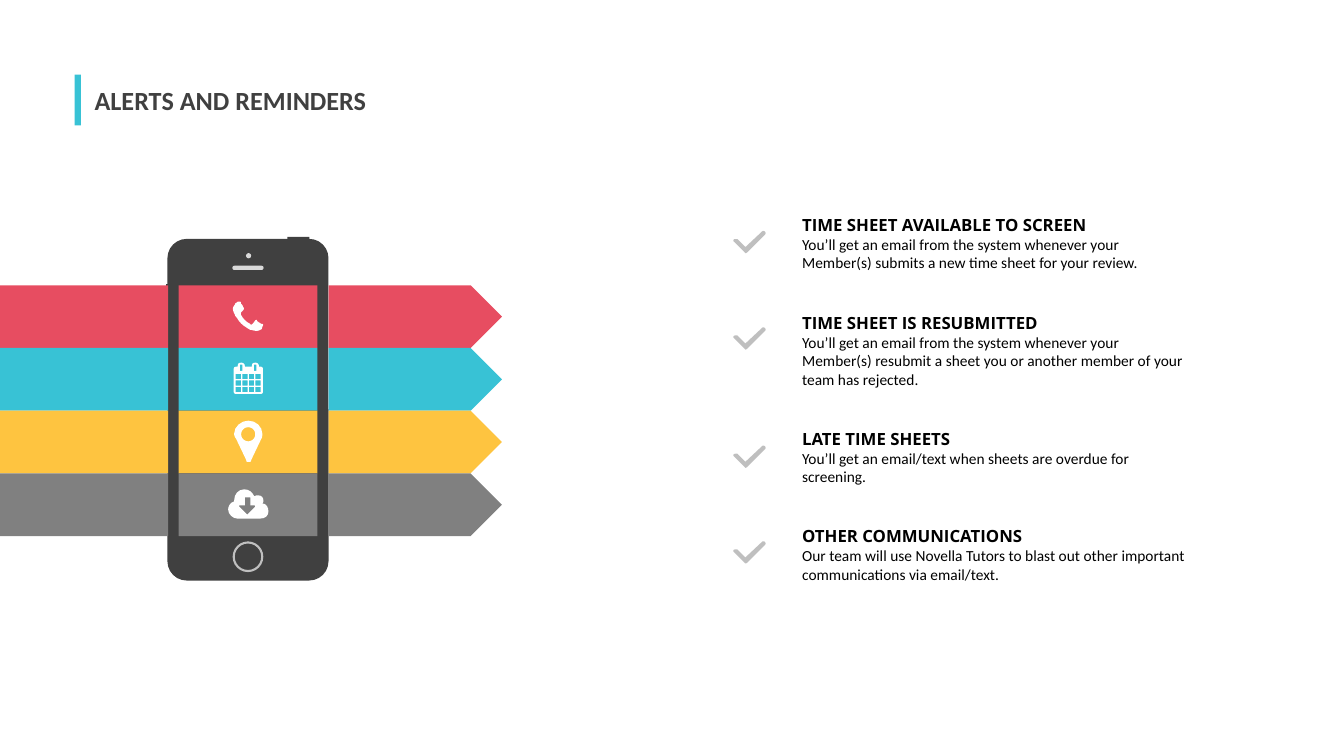
from dataclasses import dataclass
from math import cos, pi, sin

from lxml.etree import SubElement
from pptx import Presentation
from pptx.dml.color import RGBColor
from pptx.enum.shapes import MSO_SHAPE
from pptx.enum.text import MSO_ANCHOR, MSO_AUTO_SIZE, PP_ALIGN
from pptx.oxml.ns import qn
from pptx.util import Cm, Pt


@dataclass(frozen=True)
class Theme:
    red: str = "E74D61"
    teal: str = "38C2D5"
    yellow: str = "FEC440"
    grey: str = "808080"
    dark: str = "404040"
    silver: str = "BFBFBF"
    pale: str = "D9D9D9"
    white: str = "FFFFFF"
    black: str = "000000"
    title_size: float = 18.7
    heading_size: float = 12
    detail_size: float = 11
    body_font: str = "Calibri"
    heading_font: str = "Open Sans"


THEME = Theme()
GRID = Cm(0.0254)  # one unit of the icon outlines

ALERTS = [  # text top, text height, tick top, heading, detail
    (5.28, 1.75, 5.82, "TIME SHEET AVAILABLE TO SCREEN",
     "You’ll get an email from the system whenever your Member(s) submits "
     "a new time sheet for your review."),
    (7.75, 2.24, 8.25, "TIME SHEET IS RESUBMITTED",
     "You’ll get an email from the system whenever your Member(s) resubmit "
     "a sheet you or another member of your team has rejected."),
    (10.67, 1.75, 11.23, "LATE TIME SHEETS",
     "You’ll get an email/text when sheets are overdue for screening."),
    (13.13, 1.75, 13.64, "OTHER COMMUNICATIONS",
     "Our team will use Novella Tutors to blast out other important "
     "communications via email/text."),
]


# Outlines: a pair is a corner, six numbers are a Bézier curve
def rectangle(x, y, width, height):
    return [(x, y), (x + width, y), (x + width, y + height), (x, y + height)]


def circle(x, y, radius):
    angles = [2 * pi * step / 32 for step in range(32)]
    return [(x + radius * cos(a), y + radius * sin(a)) for a in angles]


TICK = [[(31, 4), (14, 21), (14, 21, 13, 22, 12, 22), (12, 22, 11, 21, 11, 21),
         (1, 11), (1, 11, 0, 10, 0, 10), (0, 8, 1, 8, 3, 8), (3, 8, 4, 8, 4, 8),
         (12, 16), (28, 1), (29, 0, 29, 0, 30, 0), (31, 0, 32, 1, 32, 2),
         (32, 3, 32, 3, 31, 4)]]

HANDSET = [[(29, 26), (29, 27, 28, 28, 27, 28), (26, 29, 24, 29, 23, 29),
            (21, 29, 19, 28, 17, 28), (16, 27, 15, 27, 14, 26),
            (10, 24, 6, 20, 4, 16), (3, 15, 2, 14, 2, 13), (1, 11, 0, 9, 0, 7),
            (0, 6, 1, 4, 2, 3), (2, 2, 3, 1, 4, 1), (4, 0, 6, 0, 7, 0),
            (8, 0, 8, 1, 8, 2), (9, 3, 10, 4, 10, 5), (11, 6, 11, 7, 11, 7),
            (11, 9, 8, 10, 8, 11), (8, 12, 8, 13, 8, 13),
            (10, 17, 13, 20, 17, 22), (17, 22, 18, 23, 18, 23),
            (20, 23, 22, 18, 23, 18), (24, 18, 24, 20, 25, 20),
            (26, 21, 27, 21, 28, 22), (29, 22, 30, 22, 30, 23),
            (30, 24, 29, 25, 29, 26)]]

CALENDAR = [
    [(29, 29), (29, 30, 28, 31, 27, 31), (2, 31), (1, 31, 0, 30, 0, 29),
     (0, 6), (0, 5, 1, 4, 2, 4), (4, 4), (4, 3), (4, 1, 5, 0, 7, 0), (8, 0),
     (9, 0, 11, 1, 11, 3), (11, 4), (18, 4), (18, 3), (18, 1, 19, 0, 21, 0),
     (22, 0), (23, 0, 25, 1, 25, 3), (25, 4), (27, 4), (28, 4, 29, 5, 29, 6)],
    *[rectangle(x, 2, 2.5, 6) for x in (6.2, 20)],
    *[rectangle(2 + 6.5 * column, 11 + 6.5 * row, 5.3, 5.3)
      for row in range(3) for column in range(4)],
]

PIN = [[(27, 18), (17, 39), (17, 41, 16, 41, 14, 41), (13, 41, 12, 41, 12, 39),
        (2, 18), (1, 17, 0, 15, 0, 13), (0, 6, 7, 0, 14, 0),
        (22, 0, 28, 6, 28, 13), (28, 15, 28, 17, 27, 18)],
       circle(14, 13.5, 7)]

CLOUD = [[(32, 29), (9, 29), (5, 29, 0, 25, 0, 20), (0, 17, 2, 13, 6, 12),
          (6, 11), (6, 5, 10, 0, 16, 0), (21, 0, 24, 3, 26, 7),
          (27, 6, 29, 6, 30, 6), (33, 6, 35, 8, 35, 11),
          (35, 12, 35, 13, 34, 14), (38, 14, 40, 18, 40, 22),
          (40, 26, 37, 29, 32, 29)],
         [(26.5, 16), (22, 16), (22, 8), (16.5, 8), (16.5, 16), (11, 16),
          (11, 17), (19, 25), (27, 17)]]

BANDS = [  # colour, icon, icon left, icon top
    (THEME.red, HANDSET, 5.87, 7.6),
    (THEME.teal, CALENDAR, 5.89, 9.14),
    (THEME.yellow, PIN, 5.9, 10.6),
    (THEME.grey, CLOUD, 5.75, 12.33),
]


def flatten(outline):
    """Turn corners and curves into a list of points in EMU."""
    points = []
    for segment in outline:
        if len(segment) == 2:
            points.append(segment)
            continue
        (x0, y0), (x1, y1, x2, y2, x3, y3) = points[-1], segment
        for t in (0.25, 0.5, 0.75, 1):
            a, b, c, d = (1 - t)**3, 3 * t * (1 - t)**2, 3 * t**2 * (1 - t), t**3
            points.append((a * x0 + b * x1 + c * x2 + d * x3,
                           a * y0 + b * y1 + c * y2 + d * y3))
    return [(round(x * GRID), round(y * GRID)) for x, y in points]


def paint(shape, fill, line=None, line_width=0.75):
    shape.shadow.inherit = False
    if fill:
        shape.fill.solid()
        shape.fill.fore_color.rgb = RGBColor.from_string(fill)
    else:
        shape.fill.background()
    if line:
        shape.line.color.rgb = RGBColor.from_string(line)
        shape.line.width = Pt(line_width)
    else:
        shape.line.fill.background()


def add_block(slide, kind, left, top, width, height, fill, **line):
    block = slide.shapes.add_shape(kind, Cm(left), Cm(top), Cm(width), Cm(height))
    paint(block, fill, **line)
    return block


def add_icon(slide, outlines, left, top, fill):
    first, *others = [flatten(outline) for outline in outlines]
    builder = slide.shapes.build_freeform(*first[0])
    builder.add_line_segments(first[1:])
    for hole in others:
        builder.move_to(*hole[0])
        builder.add_line_segments(hole[1:])
    paint(builder.convert_to_shape(Cm(left), Cm(top)), fill)


def place_text(holder, left, top, width, height, anchor):
    holder.left, holder.top = Cm(left), Cm(top)
    holder.width, holder.height = Cm(width), Cm(height)
    frame = holder.text_frame
    frame.word_wrap = True
    frame.auto_size = MSO_AUTO_SIZE.NONE
    frame.vertical_anchor = anchor
    return frame


def write(paragraph, text, size, font, color, bold):
    paragraph.alignment = PP_ALIGN.LEFT
    paragraph.space_before = paragraph.space_after = Pt(0)
    paragraph.line_spacing = 1.0
    properties = paragraph._p.get_or_add_pPr()
    properties.set("marL", "0")
    properties.set("indent", "0")
    SubElement(properties, qn("a:buNone"))
    run = paragraph.add_run()
    run.text = text
    run.font.size, run.font.name, run.font.bold = Pt(size), font, bold
    run.font.color.rgb = RGBColor.from_string(color)


def add_title(slide):
    frame = place_text(slide.shapes.title, 2.13, 1.98, 10.82, 1.07, MSO_ANCHOR.MIDDLE)
    write(frame.paragraphs[0], "ALERTS AND REMINDERS", THEME.title_size,
          THEME.body_font, THEME.dark, True)
    add_block(slide, MSO_SHAPE.RECTANGLE, 1.88, 1.88, 0.16, 1.28, THEME.teal)


def add_phone(slide):
    body = add_block(slide, MSO_SHAPE.ROUNDED_RECTANGLE, 4.22, 6.02, 4.06, 8.61, THEME.dark)
    body.adjustments[0] = 0.12
    # Side buttons and power button
    for button in [(4.19, 7.16, 0.05, 0.43), (4.21, 7.98, 0.05, 0.28),
                   (4.21, 8.66, 0.05, 0.28), (7.24, 5.97, 0.56, 0.1)]:
        add_block(slide, MSO_SHAPE.RECTANGLE, *button, THEME.dark)
    # Home button, speaker and camera
    add_block(slide, MSO_SHAPE.OVAL, 5.89, 13.67, 0.72, 0.72, None,
              line=THEME.silver, line_width=1.5)
    speaker = add_block(slide, MSO_SHAPE.ROUNDED_RECTANGLE, 5.87, 6.71, 0.76, 0.08,
                        THEME.pale, line=THEME.pale)
    speaker.adjustments[0] = 0.5
    add_block(slide, MSO_SHAPE.OVAL, 6.2, 6.38, 0.13, 0.13, THEME.pale)


def add_band(slide, row, color, icon, icon_left, icon_top):
    pitch = 1.58
    top = 7.19 + row * pitch
    for kind, left, width in [(MSO_SHAPE.RECTANGLE, 0, 4.24),
                              (MSO_SHAPE.PENTAGON, 8.28, 4.37),
                              (MSO_SHAPE.RECTANGLE, 4.5, 3.5)]:
        add_block(slide, kind, left, top, width, pitch, color)
    add_icon(slide, icon, icon_left, icon_top, THEME.white)


def add_alert(slide, holder, top, height, tick_top, heading, detail):
    frame = place_text(holder, 19.96, top, 10.29, height, MSO_ANCHOR.TOP)
    write(frame.paragraphs[0], heading, THEME.heading_size, THEME.heading_font,
          THEME.black, True)
    write(frame.add_paragraph(), detail, THEME.detail_size, THEME.body_font,
          THEME.black, False)
    add_icon(slide, TICK, 18.48, tick_top, THEME.silver)


def main():
    deck = Presentation()
    deck.slide_width, deck.slide_height = Cm(33.87), Cm(19.05)
    # The comparison layout has a title and four body placeholders
    slide = deck.slides.add_slide(deck.slide_layouts[4])
    _, *alert_holders = list(slide.placeholders)
    add_title(slide)
    add_phone(slide)
    for row, band in enumerate(BANDS):
        add_band(slide, row, *band)
    for holder, alert in zip(alert_holders, ALERTS):
        add_alert(slide, holder, *alert)
    deck.save("out.pptx")


if __name__ == "__main__":
    main()
